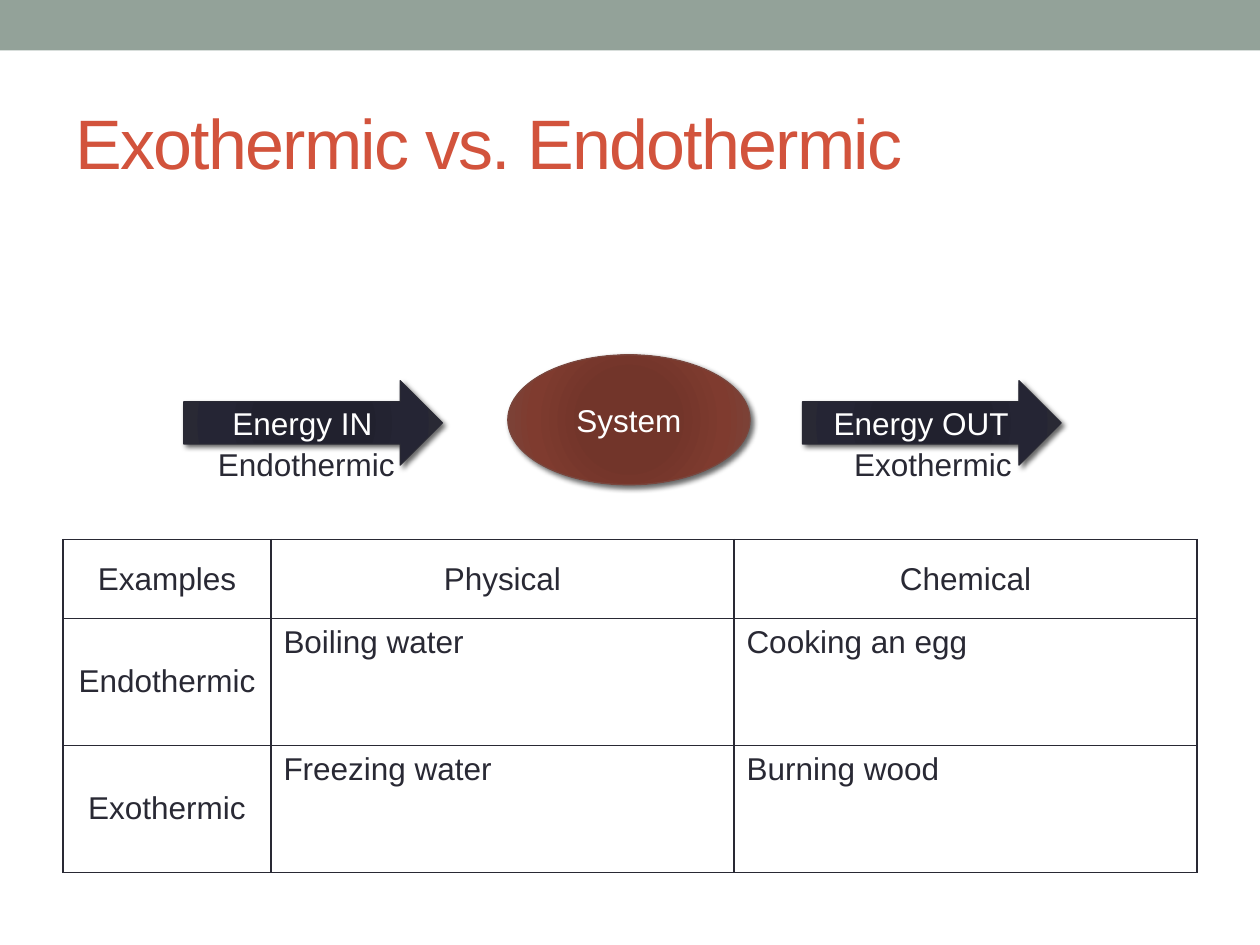
"""Build the slide comparing exothermic and endothermic changes."""
from dataclasses import dataclass

from pptx import Presentation
from pptx.dml.color import RGBColor
from pptx.enum.shapes import MSO_SHAPE
from pptx.enum.text import MSO_ANCHOR, PP_ALIGN
from pptx.oxml import parse_xml
from pptx.oxml.ns import nsdecls, qn
from pptx.util import Pt


@dataclass(frozen=True)
class Theme:
    font: str = "Arial"
    band: str = "93A299"
    accent: str = "D2533C"
    ink: str = "292934"
    light: str = "FFFFFF"
    shadow: str = "000000"
    red_stops: tuple = ((0, "743327"), (34, "72352A"), (70, "7F3B2F"), (100, "79463D"))
    ink_stops: tuple = ((0, "21212F"), (34, "21212E"), (70, "252534"), (100, "292934"))
    title_size: int = 40
    body_size: int = 18


class SlideBuilder:
    def __init__(self, prs, theme):
        self.theme = theme
        self.s = prs.slides.add_slide(prs.slide_layouts[6])

    def add_run(self, tf, text, color, size=None, align=PP_ALIGN.LEFT):
        p = tf.paragraphs[0]
        p.alignment = align
        r = p.add_run()
        r.text = text
        style = {"name": self.theme.font, "size": Pt(size or self.theme.body_size)}
        for name, value in style.items():
            setattr(r.font, name, value)
        r.font.color.rgb = RGBColor.from_string(color)
        return r

    def shape(self, kind, box):
        sp = self.s.shapes.add_shape(kind, *map(Pt, box))
        sp.shadow.inherit = False
        return sp

    def band(self, box):
        sp = self.shape(MSO_SHAPE.RECTANGLE, box)
        sp.fill.solid()
        sp.fill.fore_color.rgb = RGBColor.from_string(self.theme.band)
        sp.line.fill.background()

    def text(self, text, box, color, size=None, anchor=MSO_ANCHOR.TOP):
        tf = self.s.shapes.add_textbox(*map(Pt, box)).text_frame
        for name, value in {"word_wrap": True, "vertical_anchor": anchor}.items():
            setattr(tf, name, value)
        return self.add_run(tf, text, color, size)

    def title(self, text, box):
        r = self.text(text, box, self.theme.accent, self.theme.title_size, MSO_ANCHOR.MIDDLE)
        r.font._element.set("spc", "-100")

    def glossy(self, kind, text, box, stops):
        sp = self.shape(kind, box)
        sp.fill.gradient()
        spPr = sp._element.spPr
        gs = "".join(
            f'<a:gs pos="{pos * 1000}"><a:srgbClr val="{color}"/></a:gs>' for pos, color in stops
        )
        spPr.replace(spPr.find(qn("a:gradFill")), parse_xml(
            f'<a:gradFill {nsdecls("a")} rotWithShape="1"><a:gsLst>{gs}</a:gsLst>'
            '<a:path path="circle"><a:fillToRect l="100000" t="100000" r="100000" b="100000"/>'
            '</a:path></a:gradFill>'
        ))
        sp.line.color.rgb = RGBColor.from_string(stops[-1][1])
        sp.line.width = Pt(0.75)
        spPr.find(qn("a:effectLst")).append(parse_xml(
            f'<a:outerShdw {nsdecls("a")} blurRad="{Pt(3)}" dist="{Pt(2)}" dir="2700000" '
            f'algn="tl" rotWithShape="0"><a:srgbClr val="{self.theme.shadow}">'
            '<a:alpha val="60000"/></a:srgbClr></a:outerShdw>'
        ))
        sp.text_frame.vertical_anchor = MSO_ANCHOR.MIDDLE
        self.add_run(sp.text_frame, text, self.theme.light, align=PP_ALIGN.CENTER)

    def borders(self, cell):
        tcPr = cell._tc.get_or_add_tcPr()
        for i, side in enumerate(("lnL", "lnR", "lnT", "lnB")):
            tcPr.insert(i, parse_xml(
                f'<a:{side} {nsdecls("a")} w="{Pt(1)}"><a:solidFill>'
                f'<a:srgbClr val="{self.theme.ink}"/></a:solidFill></a:{side}>'
            ))

    def table(self, rows, left, top, widths, heights):
        frame = self.s.shapes.add_table(
            len(rows), len(widths), Pt(left), Pt(top), Pt(sum(widths)), Pt(sum(heights))
        )
        table = frame.table
        for name in ("first_row", "horz_banding"):
            setattr(table, name, False)
        for column, width in zip(table.columns, widths):
            column.width = Pt(width)
        for i, (row, height) in enumerate(zip(rows, heights)):
            table.rows[i].height = Pt(height)
            for j, text in enumerate(row):
                cell = table.cell(i, j)
                heading = i == 0 or j == 0
                cell.fill.background()
                cell.vertical_anchor = MSO_ANCHOR.MIDDLE if heading else MSO_ANCHOR.TOP
                align = PP_ALIGN.CENTER if heading else PP_ALIGN.LEFT
                self.add_run(cell.text_frame, text, self.theme.ink, align=align)
                self.borders(cell)


def main():
    prs = Presentation()
    prs.slide_width, prs.slide_height = Pt(720), Pt(540)
    theme = Theme()
    slide = SlideBuilder(prs, theme)
    slide.band((0, 0, 720, 28.8))
    slide.title("Exothermic vs. Endothermic", (36, 41.8, 648, 77.8))
    slide.table(
        [
            ("Examples", "Physical", "Chemical"),
            ("Endothermic", "Boiling water", "Cooking an egg"),
            ("Exothermic", "Freezing water", "Burning wood"),
        ],
        36, 308.4, (118.8, 264.6, 264.6), (45, 72.6, 72.6),
    )
    slide.glossy(MSO_SHAPE.OVAL, "System", (290.2, 202.8, 138.4, 74.2), theme.red_stops)
    flows = (
        ("Energy OUT", 458.6, "Exothermic", 481),
        ("Energy IN", 105, "Endothermic", 117.4),
    )
    for energy, arrow_left, label, label_left in flows:
        slide.glossy(MSO_SHAPE.RIGHT_ARROW, energy, (arrow_left, 217.6, 147.8, 48.2), theme.ink_stops)
        slide.text(label, (label_left, 250.8, 136.8, 29), theme.ink)
    prs.save("out.pptx")


if __name__ == "__main__":
    main()
